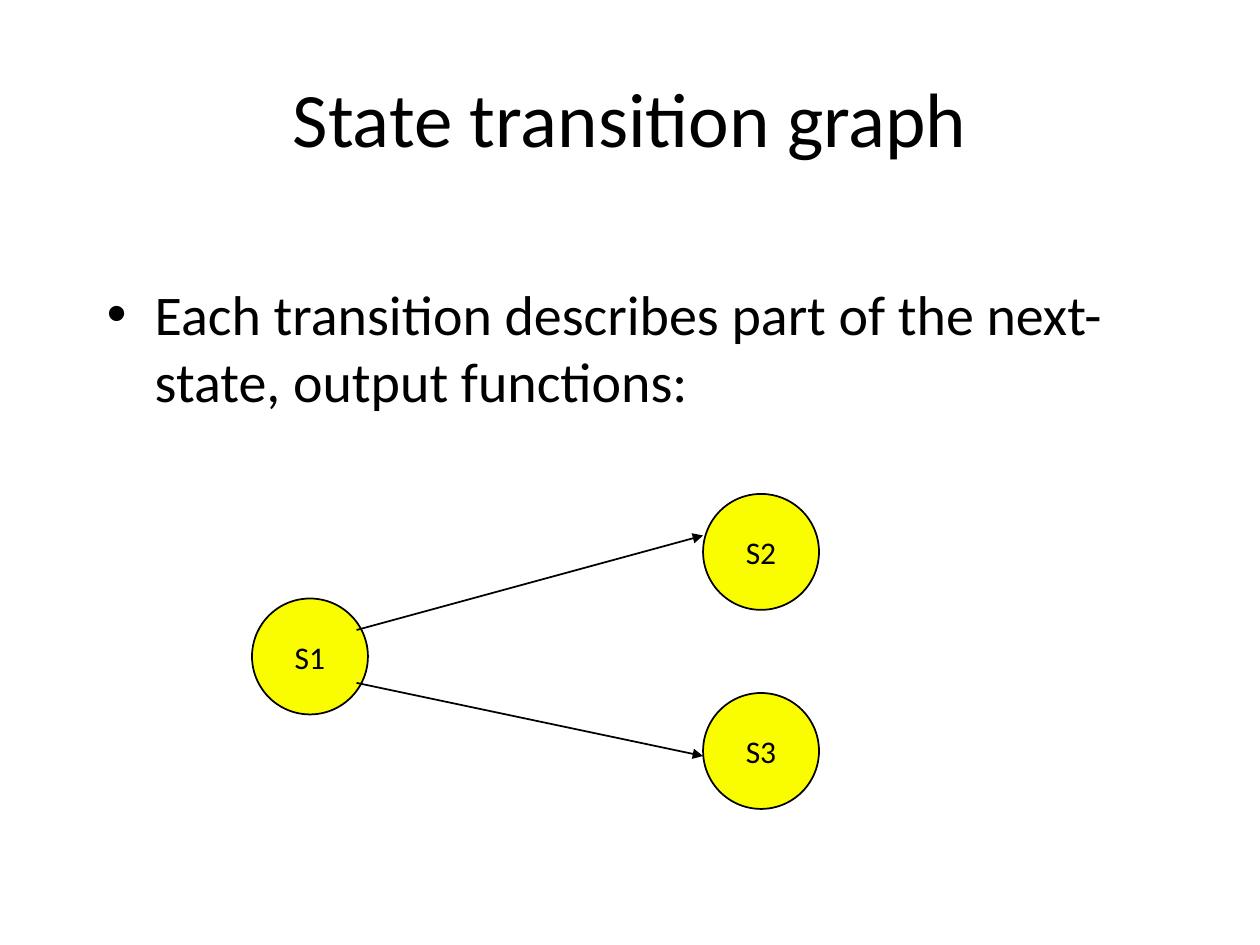
from lxml import etree
from pptx import Presentation
from pptx.dml.color import RGBColor
from pptx.enum import shapes, text
from pptx.oxml.ns import qn
from pptx.util import Inches, Pt

BLACK, YELLOW = "000000", "FAFD00"
DIAMETER = 0.92


def color(value):
    return RGBColor.from_string(value)


def write(shape, words, size, align, anchor, wrap=True):
    """Put one styled paragraph in a shape and return it."""
    frame = shape.text_frame
    frame.text = words
    frame.word_wrap = wrap
    frame.vertical_anchor = anchor
    para = frame.paragraphs[0]
    para.alignment = align
    font = para.runs[0].font
    font.name, font.size = "Calibri", Pt(size)
    font.color.rgb = color(BLACK)
    return para


def add_title(page, words):
    box = page.shapes.add_textbox(Inches(0.5), Inches(0.3), Inches(9), Inches(1.25))
    write(box, words, 44, text.PP_ALIGN.CENTER, text.MSO_ANCHOR.MIDDLE)


def add_bullet(page, words):
    box = page.shapes.add_textbox(Inches(0.75), Inches(2.17), Inches(8.5), Inches(1.33))
    para = write(box, words, 32, text.PP_ALIGN.LEFT, text.MSO_ANCHOR.TOP)
    props = para._p.get_or_add_pPr()
    indent = Inches(0.38)
    props.set("marL", str(indent))
    props.set("indent", str(-indent))
    etree.SubElement(props, qn("a:buFont"), typeface="Arial")
    etree.SubElement(props, qn("a:buChar"), char="•")


def add_state(page, name, left, top):
    circle = page.shapes.add_shape(
        shapes.MSO_SHAPE.OVAL, Inches(left), Inches(top), Inches(DIAMETER), Inches(DIAMETER))
    circle.shadow.inherit = False
    circle.fill.solid()
    circle.fill.fore_color.rgb = color(YELLOW)
    circle.line.color.rgb = color(BLACK)
    circle.line.width = Pt(1)
    write(circle, name, 18, text.PP_ALIGN.CENTER, text.MSO_ANCHOR.MIDDLE, wrap=False)


def add_transition(page, start, end):
    arrow = page.shapes.add_connector(
        shapes.MSO_CONNECTOR.STRAIGHT, *(Inches(value) for value in start + end))
    arrow.line.color.rgb = color(BLACK)
    arrow.line.width = Pt(1)
    etree.SubElement(arrow.line._get_or_add_ln(), qn("a:tailEnd"), type="triangle")
    etree.SubElement(arrow._element.spPr, qn("a:effectLst"))


def main():
    deck = Presentation()
    deck.slide_width, deck.slide_height = Inches(10), Inches(7.5)
    page = deck.slides.add_slide(deck.slide_layouts[6])

    add_title(page, "State transition graph")
    add_bullet(page, "Each transition describes part of the next-state, output functions:")
    for name, left, top in [("S1", 2, 4.75), ("S2", 5.58, 3.92), ("S3", 5.58, 5.5)]:
        add_state(page, name, left, top)
    for start_y, end_y in [(5, 4.25), (5.42, 6)]:
        add_transition(page, (2.83, start_y), (5.58, end_y))

    deck.save("out.pptx")


if __name__ == "__main__":
    main()
